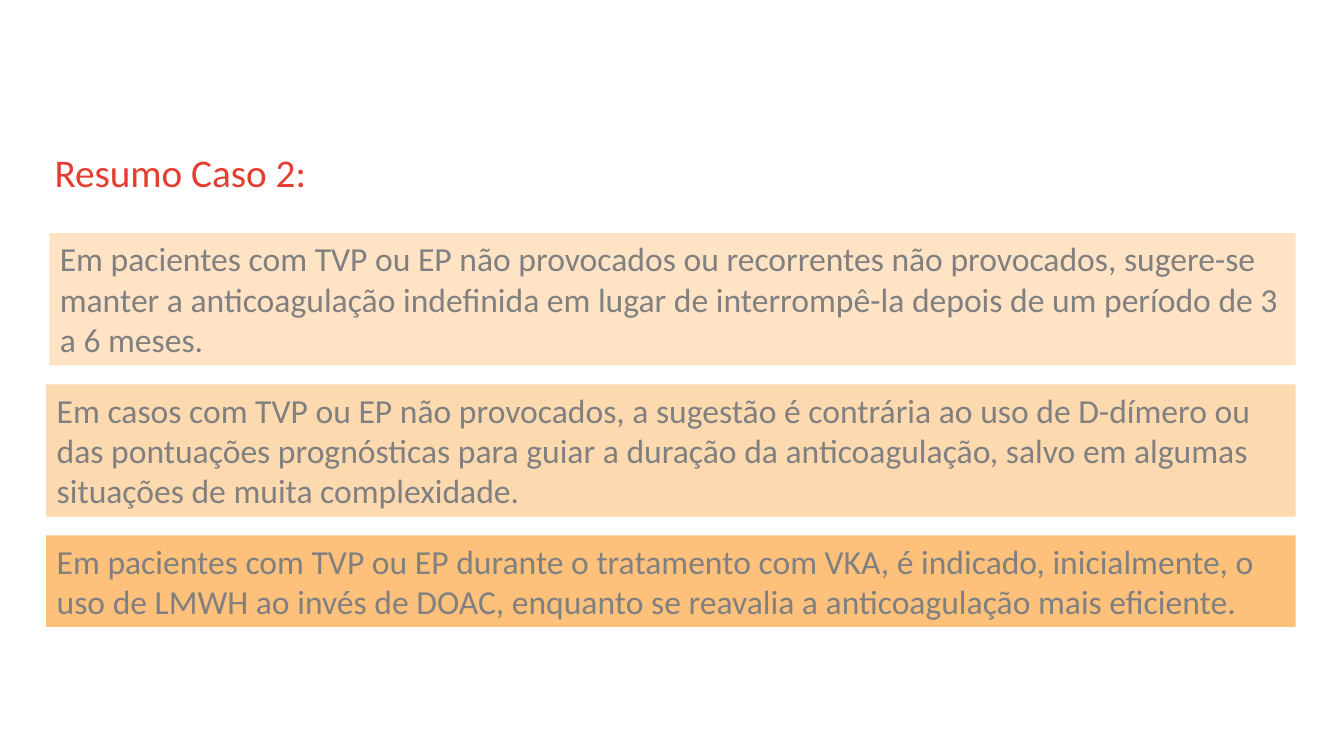
from dataclasses import dataclass

from pptx import Presentation
from pptx.dml.color import RGBColor
from pptx.enum.shapes import MSO_SHAPE as Preset
from pptx.enum.text import MSO_ANCHOR as Anchor, MSO_AUTO_SIZE as AutoSize, PP_ALIGN as Align
from pptx.util import Emu, Pt

PX = 9525


@dataclass(frozen=True)
class Theme:
    font: str = "Calibri"
    title_size: int = 28
    body_size: int = 24
    title_color: str = "E53E31"
    body_color: str = "808080"
    band_fills: tuple = ("FFE3C4", "FDD9B0", "FDC17B")


THEME = Theme()
RIGHT = 1234
FIRST_TOP = 222
GAP = 18

BANDS = (
    (47, 126, "Em pacientes com TVP ou EP não provocados ou recorrentes não provocados, "
              "sugere-se manter a anticoagulação indefinida em lugar de interrompê-la "
              "depois de um período de 3 a 6 meses."),
    (44, 126, "Em casos com TVP ou EP não provocados, a sugestão é contrária ao uso de "
              "D-dímero ou das pontuações prognósticas para guiar a duração da "
              "anticoagulação, salvo em algumas situações de muita complexidade."),
    (44, 87, "Em pacientes com TVP ou EP durante o tratamento com VKA, é indicado, "
             "inicialmente, o uso de LMWH ao invés de DOAC, enquanto se reavalia a "
             "anticoagulação mais eficiente."),
)


def px(*lengths):
    return [Emu(length * PX) for length in lengths]


def write_text(shape, text, *, size, color, insets, auto_size=AutoSize.NONE):
    frame = shape.text_frame
    frame.word_wrap = True
    frame.auto_size = auto_size
    frame.vertical_anchor = Anchor.TOP
    (frame.margin_left, frame.margin_top,
     frame.margin_right, frame.margin_bottom) = px(*insets)
    para = frame.paragraphs[0]
    para.alignment = Align.LEFT
    span = para.add_run()
    span.text = text
    span.font.name = THEME.font
    span.font.size = Pt(size)
    span.font.color.rgb = RGBColor.from_string(color)


def add_title(page, text):
    box = page.shapes.add_textbox(*px(44, 141, 1152, 75))
    write_text(box, text, size=THEME.title_size, color=THEME.title_color,
               insets=(8, 0, 0, 0))


def add_band(page, text, left, top, height, fill):
    band = page.shapes.add_shape(Preset.RECTANGLE, *px(left, top, RIGHT - left, height))
    band.shadow.inherit = False
    band.fill.solid()
    band.fill.fore_color.rgb = RGBColor.from_string(fill)
    band.line.fill.background()
    write_text(band, text, size=THEME.body_size, color=THEME.body_color,
               insets=(10, 5, 10, 5), auto_size=AutoSize.SHAPE_TO_FIT_TEXT)


def main():
    """Build the summary slide with its title and three shaded bands."""
    deck = Presentation()
    deck.slide_width, deck.slide_height = px(1280, 720)
    page = deck.slides.add_slide(deck.slide_layouts[6])
    add_title(page, "Resumo Caso 2:")
    top = FIRST_TOP
    for (left, height, text), fill in zip(BANDS, THEME.band_fills):
        add_band(page, text, left, top, height, fill)
        top += height + GAP
    deck.save("out.pptx")


if __name__ == "__main__":
    main()
